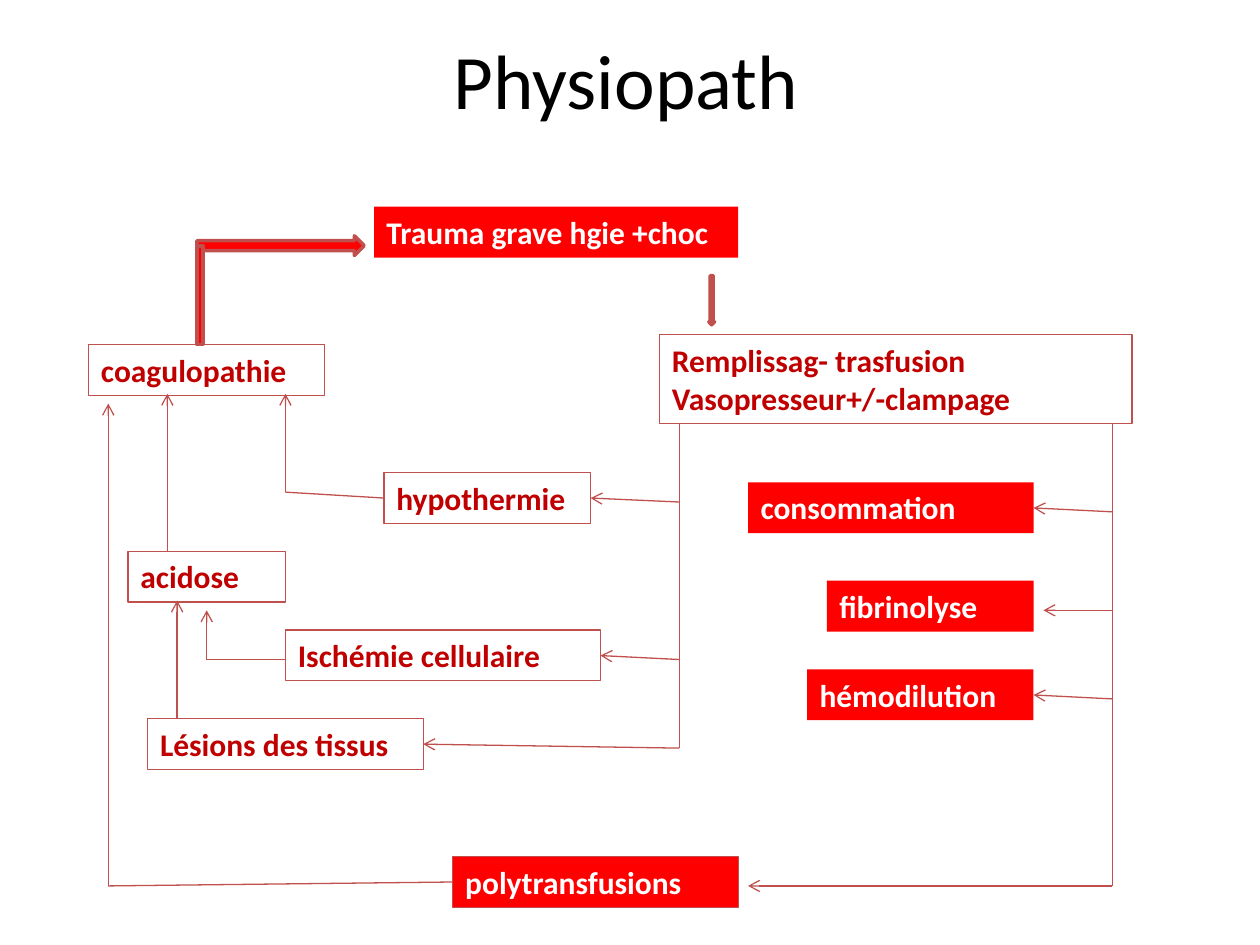
from typing import NamedTuple, Optional

from lxml.etree import SubElement
from pptx import Presentation
from pptx.dml.color import RGBColor
from pptx.enum.shapes import MSO_CONNECTOR as Connector, MSO_SHAPE as Preset
from pptx.enum.text import MSO_ANCHOR as Anchor, MSO_AUTO_SIZE as AutoSize, PP_ALIGN as Align
from pptx.oxml.ns import qn
from pptx.util import Inches, Pt

COLORS = {"red": "FF0000", "dark red": "C00000", "edge": "C0504D",
          "white": "FFFFFF", "black": "000000"}
COLUMNS, ROWS = 128, 96
WIDTH, HEIGHT = Inches(10), Inches(7.5)
LINE_ROWS = 5.17  # height of a one-line box


class Box(NamedTuple):
    text: str
    column: float
    row: float
    columns: float
    fill: Optional[str] = None
    edge: Optional[str] = "edge"
    rows: float = LINE_ROWS


class Line(NamedTuple):
    start: tuple[float, float]
    end: tuple[float, float]
    arrow: bool = True


class Block(NamedTuple):
    preset: Preset
    column: float
    row: float
    columns: float
    rows: float


BOXES = [
    Box("Trauma grave hgie +choc", 38, 21, 37, "red", None),
    Box("coagulopathie", 9, 35, 24),
    Box("Remplissag- trasfusion\nVasopresseur+/-clampage", 67, 34, 48, rows=9.05),
    Box("hypothermie", 39, 48, 21),
    Box("acidose", 13, 56, 16),
    Box("Ischémie cellulaire", 29, 64, 32),
    Box("Lésions des tissus", 15, 73, 28),
    Box("consommation", 76, 49, 29, "red", None),
    Box("fibrinolyse", 84, 59, 21, "red", None),
    Box("hémodilution", 82, 68, 23, "red", None),
    Box("polytransfusions", 46, 87, 29, "red"),
]

RIGHT_TRUNK, MIDDLE_TRUNK = 113, 69
LINES = [
    Line((RIGHT_TRUNK, 43), (RIGHT_TRUNK, 90), arrow=False),
    Line((RIGHT_TRUNK, 52), (105, 51.6)),
    Line((RIGHT_TRUNK, 62), (106, 62)),
    Line((RIGHT_TRUNK, 71), (105, 70.6)),
    Line((RIGHT_TRUNK, 90), (76, 90)),
    Line((MIDDLE_TRUNK, 43), (MIDDLE_TRUNK, 76), arrow=False),
    Line((MIDDLE_TRUNK, 51), (60, 50.6)),
    Line((MIDDLE_TRUNK, 67), (61, 66.6)),
    Line((MIDDLE_TRUNK, 76), (43, 75.6)),
    Line((39, 50.6), (29, 50), arrow=False),
    Line((29, 50), (29, 40)),
    Line((18, 73), (18, 61)),
    Line((17, 56), (17, 40)),
    Line((29, 67), (21, 67), arrow=False),
    Line((21, 67), (21, 62)),
    Line((11, 90), (11, 41)),
    Line((46, 89.6), (11, 90), arrow=False),
]

DOWN_ARROW = Block(Preset.DOWN_ARROW, 72, 28, 0.6, 5)
RETURN_ARROW = [
    Block(Preset.RIGHT_ARROW, 20, 23.95, 17, 2),
    Block(Preset.RECTANGLE, 20, 25, 0.6, 10),
]


def x(column: float) -> int:
    return round(WIDTH * column / COLUMNS)


def y(row: float) -> int:
    return round(HEIGHT * row / ROWS)


def color(name: str) -> RGBColor:
    return RGBColor.from_string(COLORS[name])


def write(frame, text: str, *, size: float, ink: str, bold: bool = False,
          align=Align.LEFT, anchor=Anchor.TOP) -> None:
    frame.word_wrap = True
    frame.vertical_anchor = anchor
    frame.text = text
    for paragraph in frame.paragraphs:
        paragraph.alignment = align
        for run in paragraph.runs:
            run.font.name = "Calibri"
            run.font.size = Pt(size)
            run.font.bold = bold
            run.font.color.rgb = color(ink)


def paint(shape, fill: Optional[str], edge: Optional[str], weight: float) -> None:
    if fill:
        shape.fill.solid()
        shape.fill.fore_color.rgb = color(fill)
    else:
        shape.fill.background()
    if edge:
        shape.line.color.rgb = color(edge)
        shape.line.width = Pt(weight)
    else:
        shape.line.fill.background()


def draw_box(slide, box: Box) -> None:
    shape = slide.shapes.add_textbox(x(box.column), y(box.row), x(box.columns), y(box.rows))
    paint(shape, box.fill, box.edge, 0.75)
    write(shape.text_frame, box.text, size=18, bold=True,
          ink="white" if box.fill else "dark red")
    shape.text_frame.auto_size = AutoSize.SHAPE_TO_FIT_TEXT


def draw_line(slide, line: Line) -> None:
    connector = slide.shapes.add_connector(
        Connector.STRAIGHT, x(line.start[0]), y(line.start[1]), x(line.end[0]), y(line.end[1]))
    connector.line.color.rgb = color("edge")
    connector.line.width = Pt(0.75)
    if line.arrow:
        SubElement(connector.line._get_or_add_ln(), qn("a:tailEnd"), type="arrow")
    SubElement(connector._element.spPr, qn("a:effectLst"))


def draw_block(slide, block: Block) -> None:
    shape = slide.shapes.add_shape(
        block.preset, x(block.column), y(block.row), x(block.columns), y(block.rows))
    shape.shadow.inherit = False
    paint(shape, "red", "edge", 2)


def main() -> None:
    presentation = Presentation()
    presentation.slide_width, presentation.slide_height = WIDTH, HEIGHT
    slide = presentation.slides.add_slide(presentation.slide_layouts.get_by_name("Title Only"))

    title = slide.shapes.title
    title.left, title.top, title.width, title.height = x(6), y(0), x(115.2), y(16)
    write(title.text_frame, "Physiopath", size=44, ink="black",
          align=Align.CENTER, anchor=Anchor.MIDDLE)

    for box in BOXES:
        draw_box(slide, box)
    draw_block(slide, DOWN_ARROW)
    for line in LINES:
        draw_line(slide, line)
    for block in RETURN_ARROW:
        draw_block(slide, block)

    presentation.save("out.pptx")


if __name__ == "__main__":
    main()
